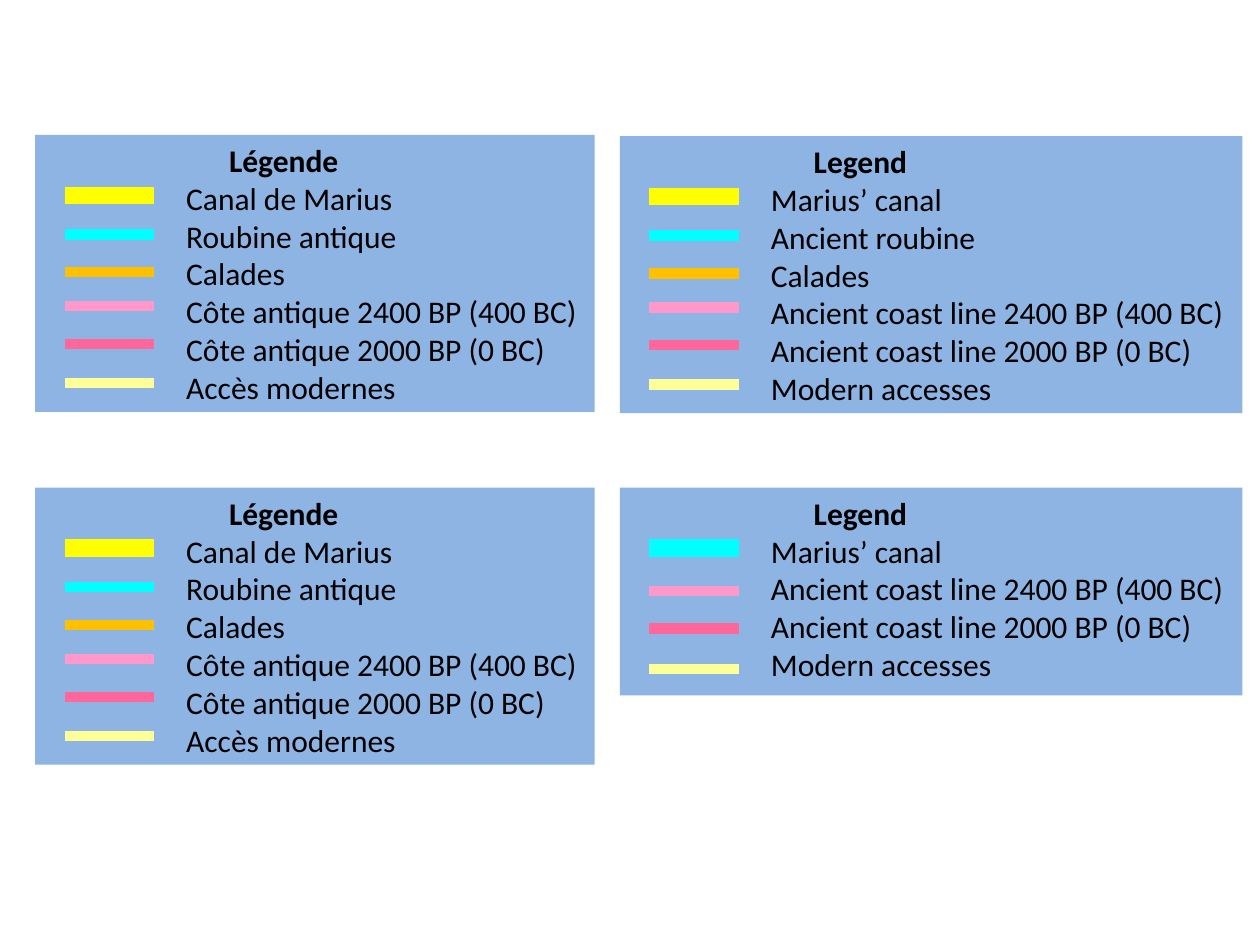
from pptx import Presentation
from pptx.dml.color import RGBColor
from pptx.enum.shapes import MSO_CONNECTOR, MSO_SHAPE
from pptx.enum.text import MSO_ANCHOR, PP_ALIGN
from pptx.oxml.ns import qn
from pptx.util import Inches, Pt
from lxml.etree import SubElement

COLORS = {
    "panel": "8EB4E3", "text": "000000", "yellow": "FFFF00",
    "cyan": "00FFFF", "orange": "FFC000", "pink": "FF99CC",
    "rose": "FF6699", "cream": "FFFF99",
}
FRENCH = ("Légende", [
    ("Canal de Marius", "yellow", 0.48),
    ("Roubine antique", "cyan", 0.79),
    ("Calades", "orange", 1.09),
    ("Côte antique 2400 BP (400 BC)", "pink", 1.36),
    ("Côte antique 2000 BP (0 BC)", "rose", 1.66),
    ("Accès modernes", "cream", 1.97),
])
ENGLISH = ("Legend", [
    ("Marius’ canal", "yellow", 0.48),
    ("Ancient roubine", "cyan", 0.79),
    ("Calades", "orange", 1.09),
    ("Ancient coast line 2400 BP (400 BC)", "pink", 1.36),
    ("Ancient coast line 2000 BP (0 BC)", "rose", 1.66),
    ("Modern accesses", "cream", 1.97),
])
ENGLISH_SHORT = ("Legend", [
    ("Marius’ canal", "cyan", 0.48),
    ("Ancient coast line 2400 BP (400 BC)", "pink", 0.82),
    ("Ancient coast line 2000 BP (0 BC)", "rose", 1.12),
    ("Modern accesses", "cream", 1.44),
])
LEGENDS = [
    (FRENCH, 0.28, 1.07, 4.44, 2.2),
    (ENGLISH, 4.92, 1.08, 4.94, 2.2),
    (FRENCH, 0.28, 3.87, 4.44, 2.2),
    (ENGLISH_SHORT, 4.92, 3.87, 4.94, 1.65),
]
TEXT_OFFSET = 1.1
KEY_OFFSET = 0.235
KEY_LENGTH = 0.71
TITLE_INDENT = 0.34


def color(name):
    return RGBColor.from_string(COLORS[name])


def add_panel(group, left, top, width, height):
    panel = group.shapes.add_shape(
        MSO_SHAPE.RECTANGLE, Inches(left), Inches(top), Inches(width), Inches(height))
    panel.shadow.inherit = False
    panel.fill.solid()
    panel.fill.fore_color.rgb = color("panel")
    panel.line.fill.background()


def add_labels(group, title, labels, left, top, width, height):
    box = group.shapes.add_textbox(
        Inches(left), Inches(top), Inches(width), Inches(height))
    frame = box.text_frame
    frame.word_wrap = False
    frame.vertical_anchor = MSO_ANCHOR.TOP
    frame.text = "\n".join([title] + labels)
    for index, paragraph in enumerate(frame.paragraphs):
        paragraph.alignment = PP_ALIGN.LEFT
        if index == 0:
            paragraph._p.get_or_add_pPr().set("marL", str(Inches(TITLE_INDENT)))
        for span in paragraph.runs:
            span.font.name = "Calibri"
            span.font.size = Pt(18)
            span.font.bold = index == 0
            span.font.color.rgb = color("text")


def add_key(group, left, y, weight, name):
    key = group.shapes.add_connector(
        MSO_CONNECTOR.STRAIGHT, Inches(left), Inches(y), Inches(left + KEY_LENGTH), Inches(y))
    key.line.color.rgb = color(name)
    key.line.width = Pt(weight)
    SubElement(key._element.spPr, qn("a:effectLst"))


def add_legend(page, legend, left, top, width, height):
    title, entries = legend
    group = page.shapes.add_group_shape()
    add_panel(group, left, top, width, height)
    labels = [label for label, name, offset in entries]
    add_labels(group, title, labels, left + TEXT_OFFSET, top, width - TEXT_OFFSET, height)
    for index, (label, name, offset) in enumerate(entries):
        add_key(group, left + KEY_OFFSET, top + offset, 6 if index else 10, name)


def main():
    deck = Presentation()
    deck.slide_width = Inches(10)
    deck.slide_height = Inches(7.5)
    page = deck.slides.add_slide(deck.slide_layouts[6])
    for legend in LEGENDS:
        add_legend(page, *legend)
    deck.save("out.pptx")


if __name__ == "__main__":
    main()
